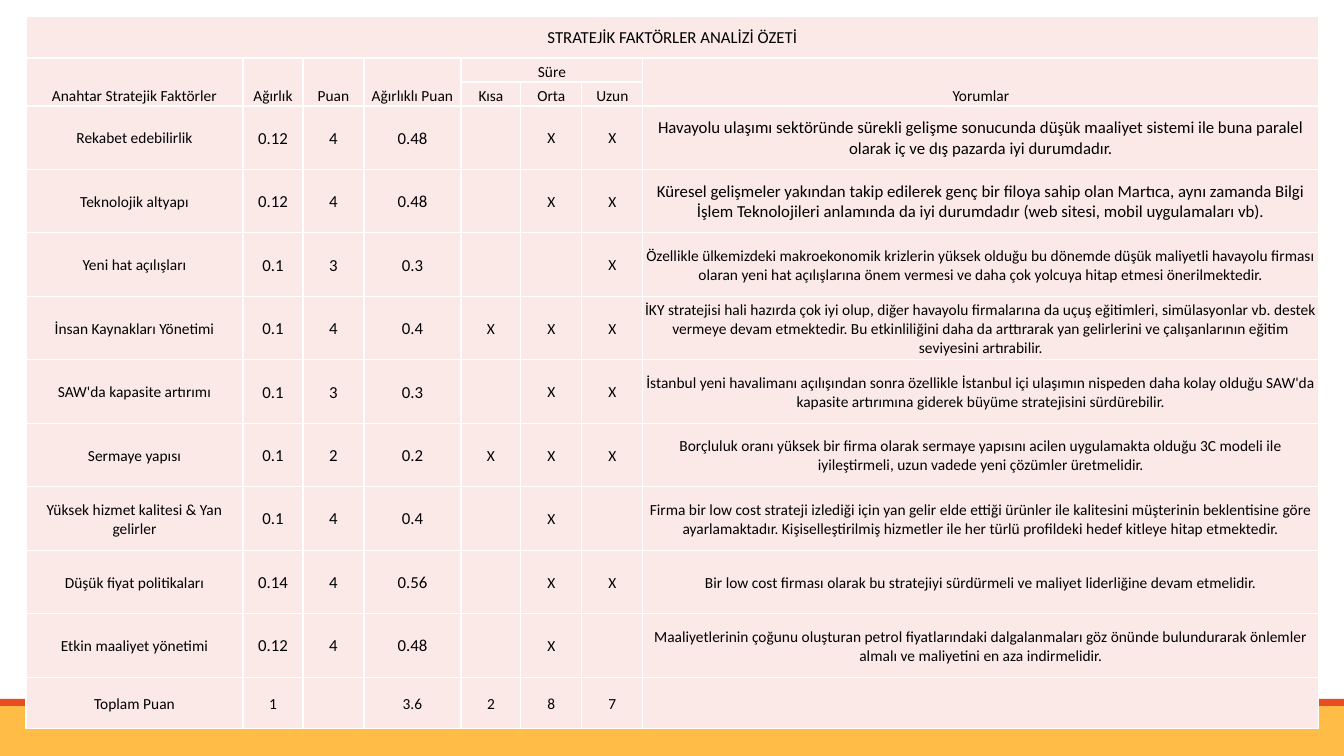
from dataclasses import dataclass

from lxml.etree import SubElement
from pptx import Presentation
from pptx.dml.color import RGBColor
from pptx.enum.shapes import MSO_SHAPE
from pptx.enum.text import MSO_ANCHOR, PP_ALIGN
from pptx.oxml.ns import qn
from pptx.slide import Slide
from pptx.table import Table, _Cell
from pptx.util import Pt

SCALE = 914400 / 100.8
FONT = "Calibri"
PINK, WHITE, BLACK = "FBE9E8", "FFFFFF", "000000"
COLUMN_WIDTHS = [217, 60, 61, 97, 60, 61, 61, 676]
TERMS = ["Kısa", "Orta", "Uzun"]
HEADER_ROWS = 3


@dataclass(frozen=True)
class Band:
    top: int
    height: int
    color: str


@dataclass(frozen=True)
class Factor:
    name: str
    weight: str
    score: str
    weighted: str
    terms: str
    comment: str
    comment_size: int = 11


BANDS = [Band(706, 50, "FFBD47"), Band(699, 7, "E84C22")]

FACTORS = [
    Factor("Rekabet edebilirlik", "0.12", "4", "0.48", "OU",
           "Havayolu ulaşımı sektöründe sürekli gelişme sonucunda düşük maaliyet sistemi ile "
           "buna paralel olarak iç ve dış pazarda iyi durumdadır.", 12),
    Factor("Teknolojik altyapı", "0.12", "4", "0.48", "OU",
           "Küresel gelişmeler yakından takip edilerek genç bir filoya sahip olan Martıca, aynı "
           "zamanda Bilgi İşlem Teknolojileri anlamında da iyi durumdadır (web sitesi, mobil "
           "uygulamaları vb).", 12),
    Factor("Yeni hat açılışları", "0.1", "3", "0.3", "U",
           "Özellikle ülkemizdeki makroekonomik krizlerin yüksek olduğu bu dönemde düşük "
           "maliyetli havayolu firması olaran yeni hat açılışlarına önem vermesi ve daha çok "
           "yolcuya hitap etmesi önerilmektedir."),
    Factor("İnsan Kaynakları Yönetimi", "0.1", "4", "0.4", "KOU",
           "İKY stratejisi hali hazırda çok iyi olup, diğer havayolu firmalarına da uçuş "
           "eğitimleri, simülasyonlar vb. destek vermeye devam etmektedir. Bu etkinliliğini daha "
           "da arttırarak yan gelirlerini ve çalışanlarının eğitim seviyesini artırabilir."),
    Factor("SAW'da kapasite artırımı", "0.1", "3", "0.3", "OU",
           "İstanbul yeni havalimanı açılışından sonra özellikle İstanbul içi ulaşımın nispeden "
           "daha kolay olduğu SAW'da kapasite artırımına giderek büyüme stratejisini "
           "sürdürebilir."),
    Factor("Sermaye yapısı", "0.1", "2", "0.2", "KOU",
           "Borçluluk oranı yüksek bir firma olarak sermaye yapısını acilen uygulamakta olduğu "
           "3C modeli ile iyileştirmeli, uzun vadede yeni çözümler üretmelidir."),
    Factor("Yüksek hizmet kalitesi & Yan gelirler", "0.1", "4", "0.4", "O",
           "Firma bir low cost strateji izlediği için yan gelir elde ettiği ürünler ile "
           "kalitesini müşterinin beklentisine göre ayarlamaktadır. Kişiselleştirilmiş hizmetler "
           "ile her türlü profildeki hedef kitleye hitap etmektedir."),
    Factor("Düşük fiyat politikaları", "0.14", "4", "0.56", "OU",
           "Bir low cost firması olarak bu stratejiyi sürdürmeli ve maliyet liderliğine devam "
           "etmelidir."),
    Factor("Etkin maaliyet yönetimi", "0.12", "4", "0.48", "O",
           "Maaliyetlerinin çoğunu oluşturan petrol fiyatlarındaki dalgalanmaları göz önünde "
           "bulundurarak önlemler almalı ve maliyetini en aza indirmelidir."),
]


def px(length: int) -> int:
    return round(length * SCALE)


def color(value: str) -> RGBColor:
    return RGBColor.from_string(value)


def draw_band(page: Slide, band: Band, width: int) -> None:
    box = page.shapes.add_shape(MSO_SHAPE.RECTANGLE, 0, px(band.top), width, px(band.height))
    box.shadow.inherit = False
    box.fill.solid()
    box.fill.fore_color.rgb = color(band.color)
    box.line.fill.background()


def draw_borders(cell: _Cell) -> None:
    properties = cell._tc.get_or_add_tcPr()
    for side in ("a:lnL", "a:lnR", "a:lnT", "a:lnB"):
        line = SubElement(properties, qn(side), w=str(Pt(1)))
        SubElement(SubElement(line, qn("a:solidFill")), qn("a:srgbClr"), val=WHITE)


def fill_cell(cell: _Cell, text: str, size: int, anchor: MSO_ANCHOR) -> None:
    draw_borders(cell)
    cell.fill.solid()
    cell.fill.fore_color.rgb = color(PINK)
    cell.margin_left = cell.margin_right = cell.margin_top = px(1)
    cell.margin_bottom = 0
    cell.vertical_anchor = anchor
    cell.text = text
    para = cell.text_frame.paragraphs[0]
    para.alignment = PP_ALIGN.CENTER
    para.font.name = FONT
    para.font.size = Pt(size)
    para.font.color.rgb = color(BLACK)


def fill_row(table: Table, row: int, texts: list[str], sizes: list[int],
             anchor: MSO_ANCHOR = MSO_ANCHOR.MIDDLE) -> None:
    for column, (text, size) in enumerate(zip(texts, sizes)):
        fill_cell(table.cell(row, column), text, size, anchor)


def draw_table(page: Slide) -> None:
    factor_heights = [64 - index % 2 for index in range(len(FACTORS))]
    heights = [42, 24, 24, *factor_heights, 51]
    frame = page.shapes.add_table(len(heights), len(COLUMN_WIDTHS), px(26), px(16),
                                  px(sum(COLUMN_WIDTHS)), px(sum(heights)))
    table = frame.table
    table.first_row = table.horz_banding = False
    for column, width in zip(table.columns, COLUMN_WIDTHS):
        column.width = px(width)
    for row, height in zip(table.rows, heights):
        row.height = px(height)

    plain = [11] * len(COLUMN_WIDTHS)
    fill_row(table, 0, ["STRATEJİK FAKTÖRLER ANALİZİ ÖZETİ"] + [""] * 7, [12] * 8)
    fill_row(table, 1, ["Anahtar Stratejik Faktörler", "Ağırlık", "Puan", "Ağırlıklı Puan",
                        "Süre", "", "", "Yorumlar"], plain, MSO_ANCHOR.BOTTOM)
    fill_row(table, 2, [""] * 4 + TERMS + [""], plain, MSO_ANCHOR.BOTTOM)
    for row, factor in enumerate(FACTORS, HEADER_ROWS):
        marks = ["X" if term[0] in factor.terms else "" for term in TERMS]
        fill_row(table, row,
                 [factor.name, factor.weight, factor.score, factor.weighted, *marks,
                  factor.comment],
                 [11, 12, 12, 12, 11, 11, 11, factor.comment_size])
    fill_row(table, len(heights) - 1, ["Toplam Puan", "1", "", "3.6", "2", "8", "7", ""], plain)

    table.cell(0, 0).merge(table.cell(0, 7))
    table.cell(1, 4).merge(table.cell(1, 6))
    for column in (0, 1, 2, 3, 7):
        table.cell(1, column).merge(table.cell(2, column))


def main() -> None:
    deck = Presentation()
    deck.slide_width, deck.slide_height = px(1344), px(756)
    page = deck.slides.add_slide(deck.slide_layouts[6])
    for band in BANDS:
        draw_band(page, band, deck.slide_width)
    draw_table(page)
    deck.save("out.pptx")


if __name__ == "__main__":
    main()
